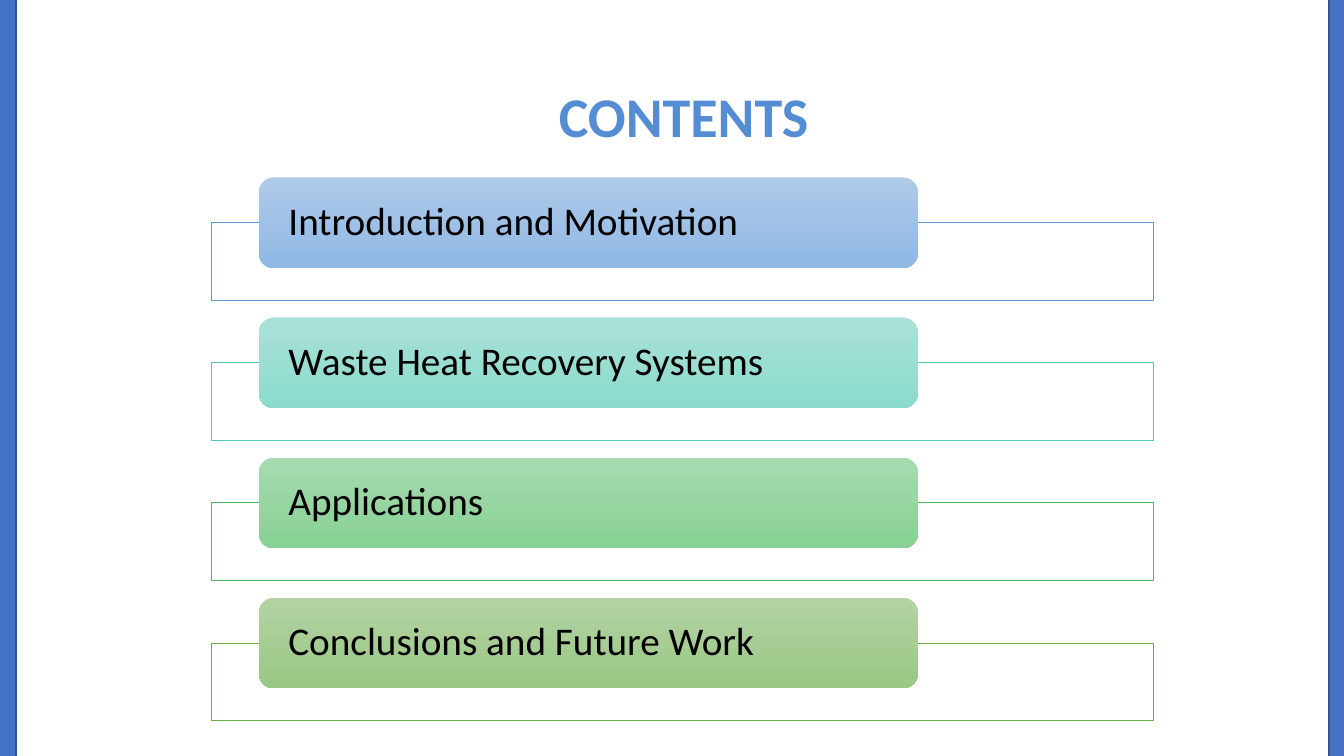
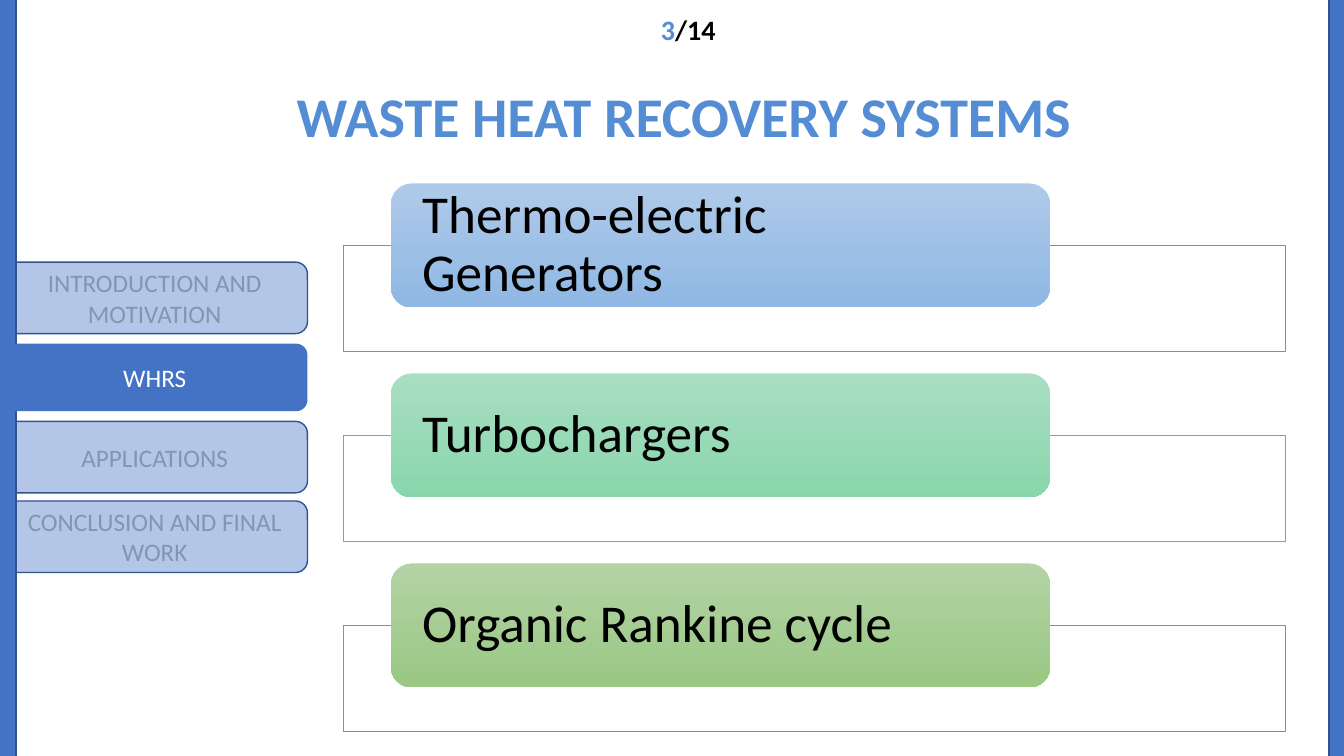
from dataclasses import dataclass

from pptx import Presentation
from pptx.dml.color import RGBColor
from pptx.enum.shapes import MSO_SHAPE as Preset
from pptx.enum.text import MSO_ANCHOR as Anchor, MSO_AUTO_SIZE as AutoSize, PP_ALIGN as Align
from pptx.util import Inches, Pt


@dataclass(frozen=True)
class Theme:
    font: str = "Calibri"
    title: str = "548DD4"
    text: str = "000000"
    paper: str = "FFFFFF"
    accent: str = "4472C4"
    edge: str = "31538F"
    tab: str = "B3C6E7"
    tab_text: str = "8296B0"
    title_size: int = 40
    page_size: int = 20
    tab_size: int = 18
    edge_width: float = 1
    frame_width: float = 0.75
    corner: float = 0.167


THEME = Theme()
BLUE = ("599BD5", "AFCAE9", "8FB8E4")
TEAL = ("50C9B6", "AAE1D7", "8ADBCC")
MINT = ("4CC38C", "A9DEC2", "89D6AD")
GREEN = ("48BD62", "A7DAB0", "87D194")
OLIVE = ("6FAB46", "B3D3A4", "9AC784")

SECTIONS = ["INTRODUCTION AND MOTIVATION", "WHRS", "APPLICATIONS", "CONCLUSION AND FINAL WORK"]

SLIDES = [
    {
        "title": "CONTENTS",
        "topics": [
            ("Introduction and Motivation", BLUE),
            ("Waste Heat Recovery Systems", TEAL),
            ("Applications", GREEN),
            ("Conclusions and Future Work", OLIVE),
        ],
        "list": {"left": 2.1, "top": 1.76, "card_height": 0.9,
                 "frame_height": 0.77, "gap": 0.17, "size": 28},
    },
    {
        "title": "WASTE HEAT RECOVERY SYSTEMS",
        "topics": [
            ("Thermo-electric Generators", BLUE),
            ("Turbochargers", MINT),
            ("Organic Rankine cycle", OLIVE),
        ],
        "list": {"left": 3.41, "top": 1.82, "card_height": 1.23,
                 "frame_height": 1.05, "gap": 0.22, "size": 38},
        "section": "WHRS",
        "page": ("3", "/14"),
    },
]

LIST_WIDTH = 9.34
CARD_INDENT = 0.05 * LIST_WIDTH
CARD_WIDTH = 0.7 * LIST_WIDTH
TAB_LEFT, TAB_TOP, TAB_WIDTH, TAB_HEIGHT, TAB_GAP = 0.02, 2.6, 3.03, 0.71, 0.08
ACTIVE_TRIM = 0.02
BAR_LEFTS = (-0.02, 13.18)


def write(frame, runs, size, align, anchor, bold=False, margins=(0.1, 0.05), spacing=1):
    frame.word_wrap = True
    frame.auto_size = AutoSize.NONE
    frame.vertical_anchor = anchor
    frame.margin_left = frame.margin_right = Inches(margins[0])
    frame.margin_top = frame.margin_bottom = Inches(margins[1])
    line = frame.paragraphs[0]
    line.alignment = align
    line.line_spacing = spacing
    for words, color in runs:
        run = line.add_run()
        run.text = words
        run.font.name = THEME.font
        run.font.size = Pt(size)
        run.font.bold = bold
        run.font.color.rgb = RGBColor.from_string(color)


def add_box(slide, preset, place, fill, line=None, line_width=THEME.edge_width):
    box = slide.shapes.add_shape(preset, *map(Inches, place))
    box.shadow.inherit = False
    if preset == Preset.ROUNDED_RECTANGLE:
        box.adjustments[0] = THEME.corner
    if isinstance(fill, tuple):
        box.fill.gradient()
        box.fill.gradient_angle = 270
        for stop, color in zip(box.fill.gradient_stops, fill):
            stop.color.rgb = RGBColor.from_string(color)
    else:
        box.fill.solid()
        box.fill.fore_color.rgb = RGBColor.from_string(fill)
    if line:
        box.line.color.rgb = RGBColor.from_string(line)
        box.line.width = Pt(line_width)
    else:
        box.line.fill.background()
    return box


def add_title(slide, words):
    title = slide.shapes.title
    title.left, title.top, title.width, title.height = map(Inches, (0.19, 0.76, 13.18, 0.87))
    write(title.text_frame, [(words, THEME.title)], THEME.title_size,
          Align.CENTER, Anchor.TOP, bold=True)


def add_side_bars(slide):
    for left in BAR_LEFTS:
        add_box(slide, Preset.RECTANGLE, (left, -0.2, 0.18, 8), THEME.accent, THEME.edge)


def add_tab(slide, section, active):
    trim = ACTIVE_TRIM if active else 0
    top = TAB_TOP + SECTIONS.index(section) * (TAB_HEIGHT + TAB_GAP)
    tab = add_box(slide, Preset.ROUNDED_RECTANGLE,
                  (TAB_LEFT, top + trim, TAB_WIDTH, TAB_HEIGHT - 2 * trim),
                  THEME.accent if active else THEME.tab,
                  None if active else THEME.edge)
    color = THEME.paper if active else THEME.tab_text
    write(tab.text_frame, [(section, color)], THEME.tab_size, Align.CENTER, Anchor.MIDDLE)


def add_page(slide, number, total):
    page = slide.shapes.add_textbox(*map(Inches, (4.57, 0.08, 4.51, 0.44)))
    write(page.text_frame, [(number, THEME.title), (total, THEME.text)], THEME.page_size,
          Align.CENTER, Anchor.TOP, bold=True)


def add_topics(slide, topics, left, top, card_height, frame_height, gap, size):
    pitch = card_height / 2 + frame_height + gap
    for row, (words, (outline, light, deep)) in enumerate(topics):
        card_top = top + row * pitch
        add_box(slide, Preset.RECTANGLE,
                (left, card_top + card_height / 2, LIST_WIDTH, frame_height),
                THEME.paper, outline, THEME.frame_width)
        card = add_box(slide, Preset.ROUNDED_RECTANGLE,
                       (left + CARD_INDENT, card_top, CARD_WIDTH, card_height), (light, deep))
        write(card.text_frame, [(words, THEME.text)], size, Align.LEFT, Anchor.MIDDLE,
              margins=(0.25, 0), spacing=0.9)


def main():
    deck = Presentation()
    deck.slide_width, deck.slide_height = Inches(13.33), Inches(7.5)
    for content in SLIDES:
        slide = deck.slides.add_slide(deck.slide_layouts[5])
        add_title(slide, content["title"])
        current = content.get("section")
        if current:
            for section in SECTIONS:
                if section != current:
                    add_tab(slide, section, active=False)
        add_side_bars(slide)
        if current:
            add_tab(slide, current, active=True)
        if "page" in content:
            add_page(slide, *content["page"])
        add_topics(slide, content["topics"], **content["list"])
    deck.save("out.pptx")


if __name__ == "__main__":
    main()
